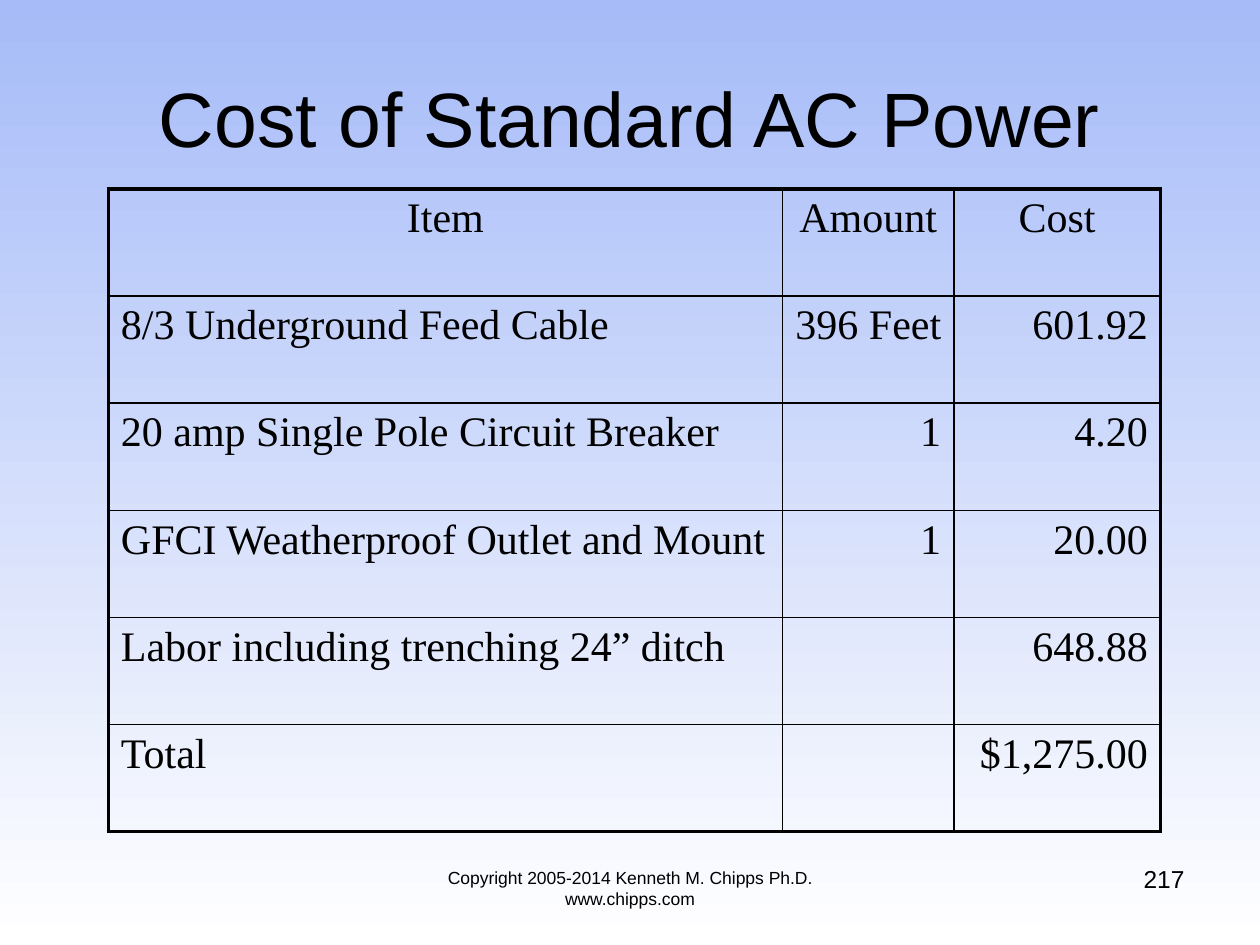
from lxml import etree
from pptx import Presentation
from pptx.dml.color import RGBColor
from pptx.enum.text import MSO_ANCHOR, PP_ALIGN
from pptx.oxml.ns import qn
from pptx.util import Inches, Pt

LEFT, CENTER, RIGHT = PP_ALIGN.LEFT, PP_ALIGN.CENTER, PP_ALIGN.RIGHT
MIDDLE = MSO_ANCHOR.MIDDLE

BLACK = RGBColor(0x00, 0x00, 0x00)
SKY_BLUE = RGBColor(0xA6, 0xBB, 0xF8)
WHITE = RGBColor(0xFF, 0xFF, 0xFF)

TITLE_ONLY = 5
OUTER_LINE = Pt(2.25)
INNER_LINE = Pt(1)
ROW_HEIGHT = 0.85
COLUMN_WIDTHS = [5.35, 1.36, 1.64]
COLUMN_ALIGNMENTS = [LEFT, RIGHT, RIGHT]
COST_ROWS = [
    ["Item", "Amount", "Cost"],
    ["8/3 Underground Feed Cable", "396 Feet", "601.92"],
    ["20 amp Single Pole Circuit Breaker", "1", "4.20"],
    ["GFCI Weatherproof Outlet and Mount", "1", "20.00"],
    ["Labor including trenching 24” ditch", "", "648.88"],
    ["Total", "", "$1,275.00"],
]


def set_text(text_frame, text, size, font_name, alignment):
    text_frame.text = text
    paragraph = text_frame.paragraphs[0]
    paragraph.alignment = alignment
    for run in paragraph.runs:
        run.font.size = Pt(size)
        run.font.name = font_name
        run.font.color.rgb = BLACK


def set_background(slide):
    fill = slide.background.fill
    fill.gradient()
    fill.gradient_angle = 270  # top to bottom
    for stop, color in zip(fill.gradient_stops, (SKY_BLUE, WHITE)):
        stop.color.rgb = color


def add_title(slide, text):
    title = slide.shapes.title
    title.left, title.top = Inches(0.5), Inches(0.3)
    title.width, title.height = Inches(9), Inches(1.25)
    title.text_frame.vertical_anchor = MIDDLE
    set_text(title.text_frame, text, 44, "Arial", CENTER)


def add_text(slide, text, left, top, width, height, size, alignment):
    box = slide.shapes.add_textbox(
        Inches(left), Inches(top), Inches(width), Inches(height))
    box.text_frame.word_wrap = True
    set_text(box.text_frame, text, size, "Arial", alignment)


def set_borders(cell, widths):
    """Draw the left, right, top and bottom borders, in that order."""
    properties = cell._tc.get_or_add_tcPr()
    for index, (side, width) in enumerate(zip("LRTB", widths)):
        line = etree.Element(qn(f"a:ln{side}"), w=str(width))
        solid_fill = etree.SubElement(line, qn("a:solidFill"))
        etree.SubElement(solid_fill, qn("a:srgbClr"), val=str(BLACK))
        properties.insert(index, line)


def add_cost_table(slide, left, top):
    row_count, column_count = len(COST_ROWS), len(COLUMN_WIDTHS)
    table = slide.shapes.add_table(
        row_count, column_count, Inches(left), Inches(top),
        Inches(sum(COLUMN_WIDTHS)), Inches(ROW_HEIGHT * row_count)).table
    table.first_row = False
    table.horz_banding = False
    for column, width in zip(table.columns, COLUMN_WIDTHS):
        column.width = Inches(width)

    for row_index, values in enumerate(COST_ROWS):
        table.rows[row_index].height = Inches(ROW_HEIGHT)
        for column_index, value in enumerate(values):
            cell = table.cell(row_index, column_index)
            cell.fill.background()
            alignment = CENTER if row_index == 0 else COLUMN_ALIGNMENTS[column_index]
            set_text(cell.text_frame, value, 24, "Times New Roman", alignment)
            on_edge = (column_index == 0, column_index == column_count - 1,
                       row_index == 0, row_index == row_count - 1)
            set_borders(cell, [OUTER_LINE if edge else INNER_LINE for edge in on_edge])


def main():
    presentation = Presentation()
    presentation.slide_width = Inches(10)
    presentation.slide_height = Inches(7.5)
    slide = presentation.slides.add_slide(presentation.slide_layouts[TITLE_ONLY])

    set_background(slide)
    add_title(slide, "Cost of Standard AC Power")
    add_cost_table(slide, 0.86, 1.5)

    # Slide number and footer
    add_text(slide, "217", 7.17, 6.81, 2.33, 0.52, 14, RIGHT)
    add_text(slide, "Copyright 2005-2014 Kenneth M. Chipps Ph.D. www.chipps.com",
             3, 6.83, 4, 0.52, 10, CENTER)

    presentation.save("out.pptx")


if __name__ == "__main__":
    main()
